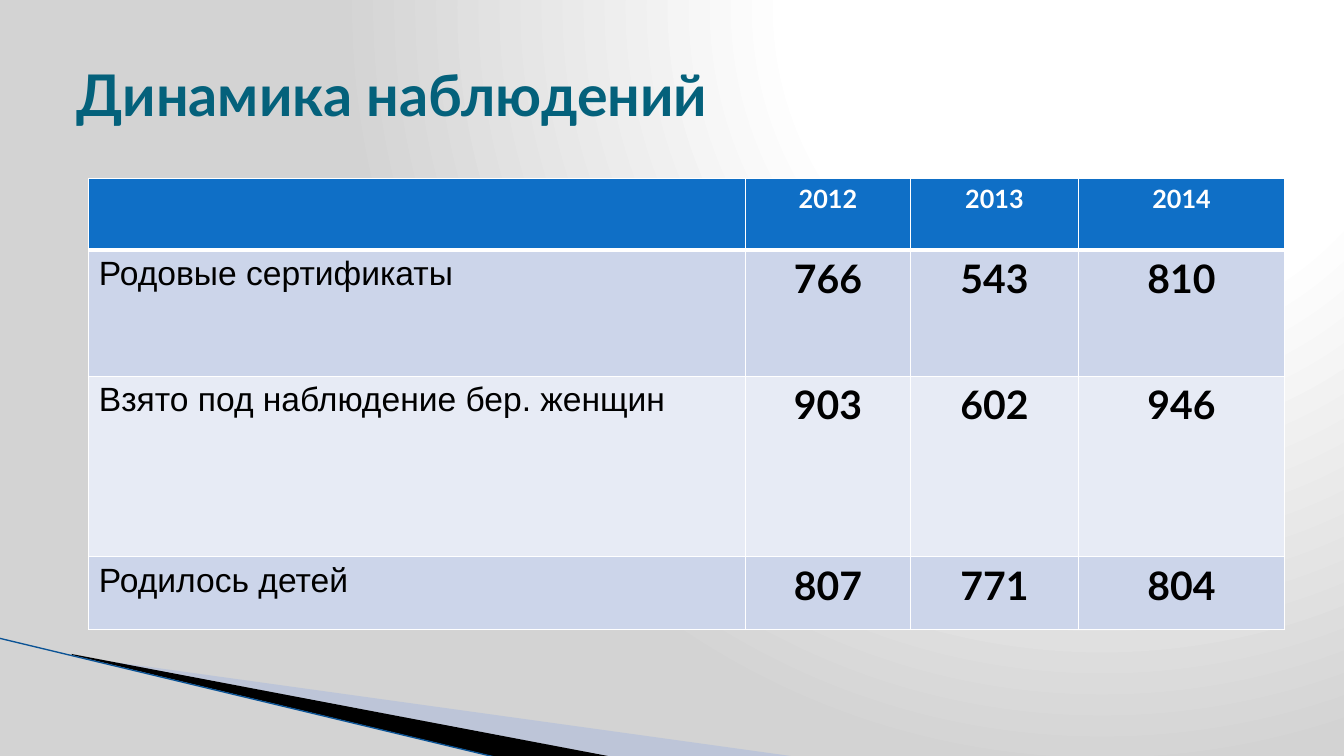
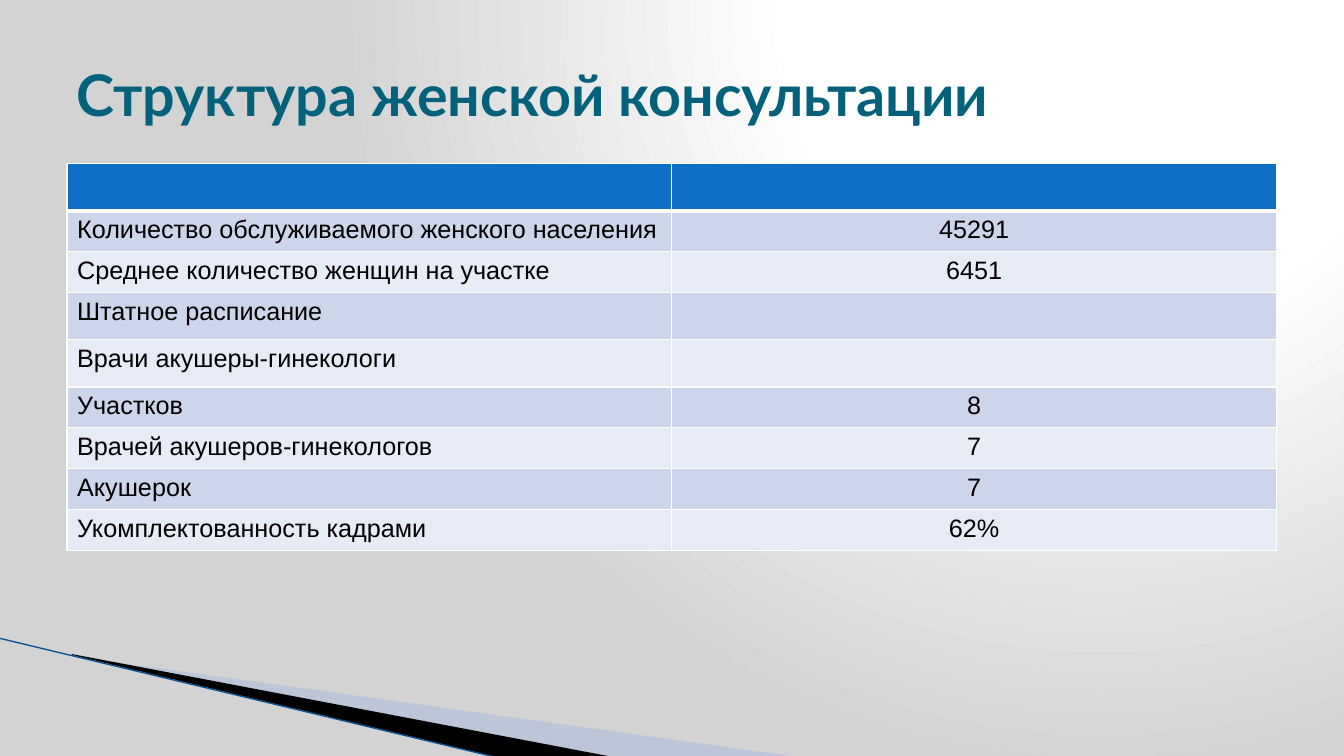
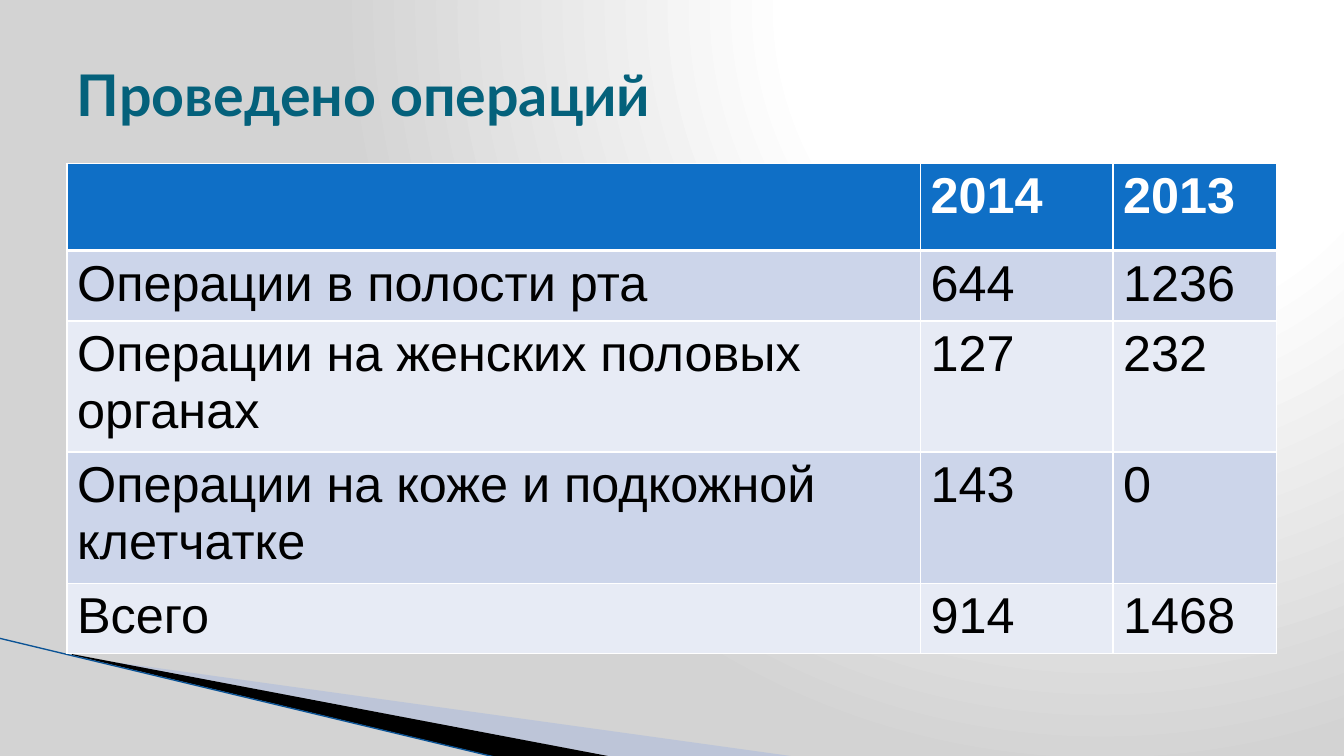
from dataclasses import dataclass

from pptx import Presentation
from pptx.dml.color import RGBColor
from pptx.enum.shapes import MSO_CONNECTOR
from pptx.enum.text import MSO_ANCHOR, PP_ALIGN
from pptx.oxml import parse_xml
from pptx.oxml.ns import nsdecls, qn
from pptx.util import Cm, Pt


@dataclass(frozen=True)
class Theme:
    title: str = "04617B"
    header: str = "0F6FC6"
    bands: tuple = ("E7EBF5", "CCD5EA")
    white: str = "FFFFFF"
    black: str = "000000"
    backdrop: str = "D3D3D3"
    wedge: str = "9DB2E1"
    edge: str = "0B5395"
    heading_font: str = "Lato"
    body_font: str = "Arial"
    title_size: int = 41
    huge: int = 36
    large: int = 28
    medium: int = 24
    small: int = 18


theme = Theme()


def format_runs(paragraph, font_name, size, color, bold):
    for run in paragraph.runs:
        run.font.name = font_name
        run.font.size = Pt(size)
        run.font.color.rgb = RGBColor.from_string(color)
        run.font.bold = bold


def add_border(cell, side, points):
    cell._tc.get_or_add_tcPr().append(parse_xml(
        f'<a:{side} {nsdecls("a")} w="{Pt(points)}"><a:solidFill>'
        f'<a:srgbClr val="{theme.white}"/></a:solidFill></a:{side}>'))


heading = theme.heading_font
body = theme.body_font
slides = [
    {
        "title": "Динамика наблюдений",
        "left": 2.24, "top": 4.5,
        "columns": [16.54, 4.17, 4.22, 5.21],
        "heights": [1.8, 3.18, 4.55, 1.83],
        "header": (heading, theme.small),
        "label": (body, theme.medium, False),
        "value": (heading, theme.large, True),
        "alignment": PP_ALIGN.CENTER,
        "rows": [
            ["", "2012", "2013", "2014"],
            ["Родовые сертификаты", "766", "543", "810"],
            ["Взято под наблюдение бер. женщин", "903", "602", "946"],
            ["Родилось детей", "807", "771", "804"],
        ],
    },
    {
        "title": "Структура женской консультации",
        "left": 1.69, "top": 4.11,
        "columns": [15.24, 15.24],
        "heights": [1.2, 1.03, 1.03, 1.19, 1.19, 1.03, 1.03, 1.03, 1.03],
        "header": (body, theme.small),
        "label": (body, theme.small, False),
        "value": (body, theme.small, False),
        "alignment": PP_ALIGN.CENTER,
        "rows": [
            ["", ""],
            ["Количество обслуживаемого женского населения", "45291"],
            ["Среднее количество женщин на участке", "6451"],
            ["Штатное расписание", ""],
            ["Врачи акушеры-гинекологи", ""],
            ["Участков", "8"],
            ["Врачей акушеров-гинекологов", "7"],
            ["Акушерок", "7"],
            ["Укомплектованность кадрами", "62%"],
        ],
    },
    {
        "title": "Проведено операций",
        "left": 1.69, "top": 4.11,
        "columns": [21.51, 4.85, 4.12],
        "heights": [2.2, 1.68, 3.1, 3.1, 1.68],
        "header": (body, theme.huge),
        "label": (body, theme.huge, False),
        "value": (body, theme.huge, False),
        "alignment": PP_ALIGN.LEFT,
        "rows": [
            ["", "2014", "2013"],
            ["Операции в полости рта", "644", "1236"],
            ["Операции на женских половых органах", "127", "232"],
            ["Операции на коже и подкожной клетчатке", "143", "0"],
            ["Всего", "914", "1468"],
        ],
    },
]
wedges = [
    (theme.wedge, 40, [(1.85, 16.54), (20.14, 19.08), (15.44, 19.08), (1.85, 16.51)]),
    (theme.black, 100, [(1.8, 16.48), (15.47, 19.08), (12.6, 19.1), (1.83, 16.51)]),
]

presentation = Presentation()
presentation.slide_width = Cm(33.87)
presentation.slide_height = Cm(19.05)

master = presentation.slide_master
master.background.fill.solid()
background = master.element.find(".//" + qn("p:bgPr"))
stops = "".join(
    f'<a:gs pos="{position * 1000}"><a:srgbClr val="{color}"/></a:gs>'
    for position, color in [(0, theme.white), (40, theme.white), (100, theme.backdrop)])
background.replace(background[0], parse_xml(
    f'<a:gradFill {nsdecls("a")} rotWithShape="1"><a:gsLst>{stops}</a:gsLst>'
    '<a:path path="circle"><a:fillToRect l="65000" t="0" r="0" b="98000"/></a:path>'
    '</a:gradFill>'))

for content in slides:
    slide = presentation.slides.add_slide(presentation.slide_layouts[6])

    for color, opacity, points in wedges:
        corners = [(Cm(x), Cm(y)) for x, y in points]
        builder = slide.shapes.build_freeform(*corners[0])
        builder.add_line_segments(corners[1:], close=True)
        wedge = builder.convert_to_shape()
        wedge.shadow.inherit = False
        wedge.fill.solid()
        wedge.fill.fore_color.rgb = RGBColor.from_string(color)
        wedge.line.fill.background()
        if opacity < 100:
            wedge._element.spPr.find(".//" + qn("a:srgbClr")).append(
                parse_xml(f'<a:alpha {nsdecls("a")} val="{opacity * 1000}"/>'))

    edge = slide.shapes.add_connector(
        MSO_CONNECTOR.STRAIGHT, Cm(-0.03), Cm(16.08), Cm(12.57), Cm(19.1))
    edge.line.color.rgb = RGBColor.from_string(theme.edge)
    edge.line.width = Pt(0.95)
    edge._element.spPr.append(parse_xml(f'<a:effectLst {nsdecls("a")}/>'))

    title = slide.shapes.add_textbox(Cm(1.69), Cm(0.76), Cm(30.48), Cm(3.18))
    title.text_frame.word_wrap = True
    title.text_frame.vertical_anchor = MSO_ANCHOR.MIDDLE
    title.text_frame.text = content["title"]
    format_runs(title.text_frame.paragraphs[0], heading, theme.title_size, theme.title, True)

    rows, columns, heights = content["rows"], content["columns"], content["heights"]
    table = slide.shapes.add_table(
        len(rows), len(columns), Cm(content["left"]), Cm(content["top"]),
        Cm(sum(columns)), Cm(sum(heights))).table
    for column, width in zip(table.columns, columns):
        column.width = Cm(width)
    for row_index, texts in enumerate(rows):
        table.rows[row_index].height = Cm(heights[row_index])
        is_header = row_index == 0
        for column_index, text in enumerate(texts):
            cell = table.cell(row_index, column_index)
            add_border(cell, "lnL", 1)
            add_border(cell, "lnR", 1)
            add_border(cell, "lnT", 3 if row_index == 1 else 1)
            add_border(cell, "lnB", 3 if is_header else 1)
            cell.fill.solid()
            cell.fill.fore_color.rgb = RGBColor.from_string(
                theme.header if is_header else theme.bands[row_index % 2])
            cell.text_frame.text = text
            paragraph = cell.text_frame.paragraphs[0]
            if column_index > 0:
                paragraph.alignment = content["alignment"]
            if is_header:
                font_name, size = content["header"]
                format_runs(paragraph, font_name, size, theme.white, True)
            else:
                font_name, size, bold = content["label" if column_index == 0 else "value"]
                format_runs(paragraph, font_name, size, theme.black, bold)

presentation.save("out.pptx")
